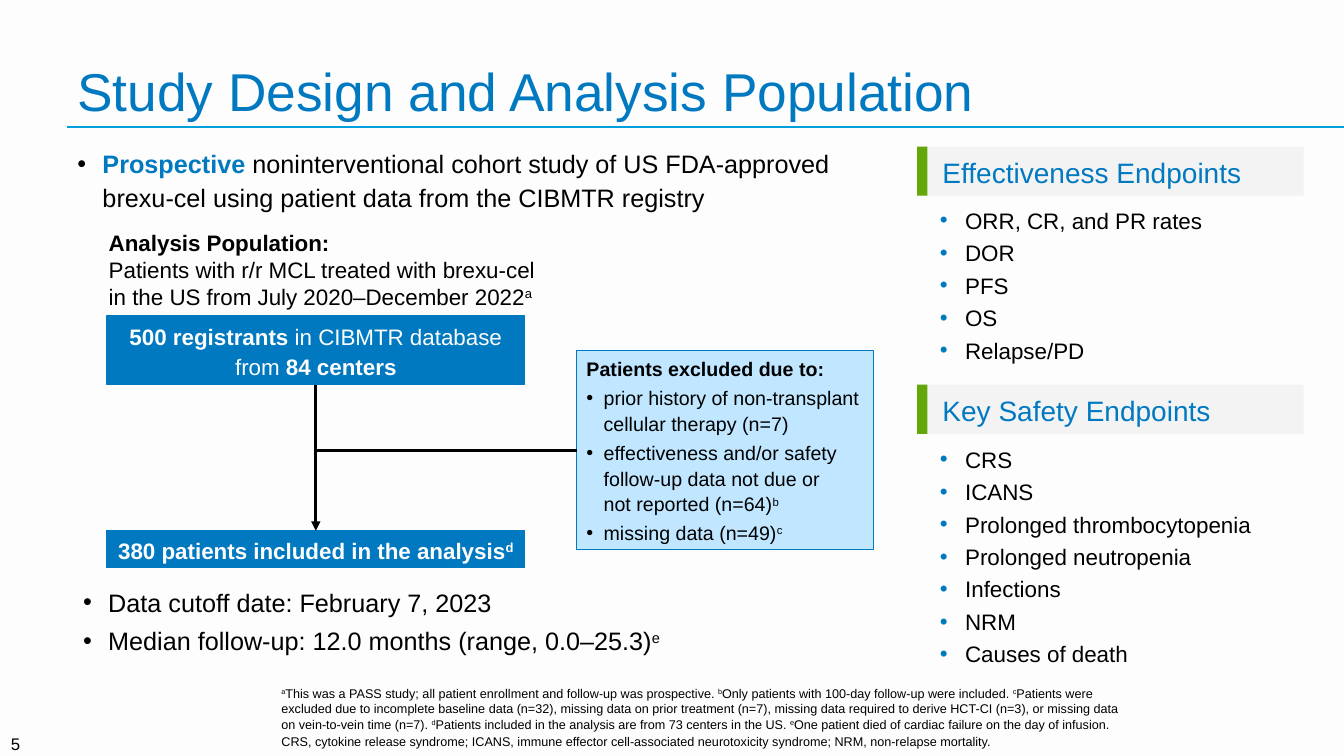
from lxml import etree
from pptx import Presentation
from pptx import util as u
from pptx.dml.color import RGBColor
from pptx.enum import shapes, text
from pptx.oxml import ns

BLUE, INK, PAPER = "0079C1", "000000", "FDFDFD"
GREEN, GREY, PALE, RULE = "63A70A", "F3F3F4", "C0E7FF", "00A0DD"
LEFT, CENTER, RIGHT = text.PP_ALIGN.LEFT, text.PP_ALIGN.CENTER, text.PP_ALIGN.RIGHT
TOP, MIDDLE, BOTTOM = text.MSO_ANCHOR.TOP, text.MSO_ANCHOR.MIDDLE, text.MSO_ANCHOR.BOTTOM
TIGHT, ROOMY = (0.1, 0.05, 0.1, 0.05), (0.25, 0.12, 0.2, 0.1)


def rgb(hex_color):
    return RGBColor.from_string(hex_color)


def write(p, words, size=16, color=INK, strong=None, align=LEFT, spacing=1.0,
          after=0, bullet=None, indent=0.25):
    """Fill a paragraph, where *...* is bold and ^...^ is superscript."""
    pPr = p._p.get_or_add_pPr()
    if bullet:
        pPr.set("marL", str(u.Inches(indent)))
        pPr.set("indent", str(-u.Inches(indent)))
        bu_color = etree.SubElement(pPr, ns.qn("a:buClr"))
        etree.SubElement(bu_color, ns.qn("a:srgbClr"), val=bullet)
        etree.SubElement(pPr, ns.qn("a:buFont"), typeface="Arial")
        etree.SubElement(pPr, ns.qn("a:buChar"), char="•")
    p.alignment, p.line_spacing = align, spacing
    p.space_before, p.space_after = u.Pt(0), u.Pt(after)
    for i, part in enumerate(words.split("*")):
        for j, bit in enumerate(part.split("^")):
            for k, line in enumerate(bit.split("\n")):
                if k:
                    p.add_line_break()
                if not line:
                    continue
                r = p.add_run()
                r.text = line
                r.font.name, r.font.size = "Arial", u.Pt(size)
                r.font.bold = i % 2 == 1
                r.font.color.rgb = rgb(strong if strong and i % 2 else color)
                if j % 2:
                    r._r.get_or_add_rPr().set("baseline", "30000")


class Deck:
    """Draws on one slide, with places in percent of its width and height."""

    def __init__(self):
        self.prs = Presentation()
        self.prs.slide_width, self.prs.slide_height = u.Inches(13.33), u.Inches(7.5)
        self.s = self.prs.slides.add_slide(self.prs.slide_layouts[1])
        self.s.background.fill.solid()
        self.s.background.fill.fore_color.rgb = rgb(PAPER)

    def x(self, share):
        return round(self.prs.slide_width * share / 100)

    def y(self, share):
        return round(self.prs.slide_height * share / 100)

    def place(self, x, y, w, h):
        return self.x(x), self.y(y), self.x(w), self.y(h)

    def fill_text(self, sp, paras, anchor=TOP, margins=TIGHT, **fmt):
        tf = sp.text_frame
        tf.word_wrap, tf.auto_size = True, text.MSO_AUTO_SIZE.NONE
        tf.vertical_anchor = anchor
        (tf.margin_left, tf.margin_top,
         tf.margin_right, tf.margin_bottom) = map(u.Inches, margins)
        for i, para in enumerate(paras):
            words, own = para if isinstance(para, tuple) else (para, {})
            p = tf.add_paragraph() if i else tf.paragraphs[0]
            write(p, words, **{**fmt, **own})

    def placeholder(self, idx, at, paras, **fmt):
        sp = self.s.placeholders[idx]
        sp.left, sp.top, sp.width, sp.height = self.place(*at)
        self.fill_text(sp, paras, **fmt)

    def label(self, at, paras, **fmt):
        self.fill_text(self.s.shapes.add_textbox(*self.place(*at)), paras, **fmt)

    def box(self, at, fill, paras=(), line=None, **fmt):
        sp = self.s.shapes.add_shape(shapes.MSO_SHAPE.RECTANGLE, *self.place(*at))
        sp.shadow.inherit = False
        sp.fill.solid()
        sp.fill.fore_color.rgb = rgb(fill)
        if line:
            sp.line.color.rgb, sp.line.width = rgb(line), u.Pt(0.75)
        else:
            sp.line.fill.background()
        self.fill_text(sp, paras, **fmt)

    def line(self, x1, y1, x2, y2, color=INK, width=2.25, arrow=False):
        c = self.s.shapes.add_connector(shapes.MSO_CONNECTOR.STRAIGHT, self.x(x1),
                                        self.y(y1), self.x(x2), self.y(y2))
        c.line.color.rgb, c.line.width = rgb(color), u.Pt(width)
        if arrow:
            etree.SubElement(c.line._get_or_add_ln(), ns.qn("a:tailEnd"), type="triangle")
        etree.SubElement(c._element.spPr, ns.qn("a:effectLst"))

    def endpoints(self, y, list_y, heading, items):
        self.box((68.25, y, 28.75, 6.5), GREY, [heading], size=20, color=BLUE,
                 anchor=MIDDLE, margins=ROOMY)
        self.box((68.25, y, 0.75, 6.5), GREEN)
        self.label((69.2, list_y, 27, 4.4 * len(items)), items, after=4, bullet=BLUE)


def main():
    deck = Deck()
    deck.line(5, 16.8, 100, 16.8, RULE, 0.75)
    deck.label((0, 96.8, 2.25, 3.2), ["5"], size=12, align=RIGHT, anchor=MIDDLE)
    deck.placeholder(0, (5, 0.1, 90, 16.7), ["Study Design and Analysis Population"],
                     size=38, color=BLUE, anchor=BOTTOM)
    deck.placeholder(1, (5, 18.6, 60, 11), [
        "*Prospective* noninterventional cohort study of US FDA-approved\n"
        "brexu-cel using patient data from the CIBMTR registry",
    ], size=18, strong=BLUE, spacing=1.1, bullet=INK)
    deck.label((4.3, 78.7, 47, 6.7), [
        "Data cutoff date: February 7, 2023",
        "Median follow-up: 12.0 months (range, 0.0–25.3)^e^",
    ], size=18, after=6, bullet=INK, anchor=MIDDLE, margins=ROOMY)

    deck.endpoints(19.4, 26.7, "Effectiveness Endpoints",
                   ["ORR, CR, and PR rates", "DOR", "PFS", "OS", "Relapse/PD"])
    deck.endpoints(50.9, 58.3, "Key Safety Endpoints",
                   ["CRS", "ICANS", "Prolonged thrombocytopenia", "Prolonged neutropenia",
                    "Infections", "NRM", "Causes of death"])

    deck.label((7.35, 29.7, 46, 12.1), [
        "*Analysis Population:*",
        "Patients with r/r MCL treated with brexu-cel\n"
        "in the US from July 2020–December 2022^a^",
    ])
    cohort = dict(line=BLUE, color=PAPER, align=CENTER, spacing=1.1, anchor=MIDDLE)
    deck.box((7.95, 41.8, 31.1, 9), BLUE,
             ["*500 registrants* in CIBMTR database from *84 centers*"], **cohort)
    deck.box((7.95, 70.2, 31.1, 4.9), BLUE,
             ["*380 patients included in the analysis^d^*"], **cohort)
    item = dict(bullet=INK, indent=0.17)
    deck.box((42.9, 46.3, 22.1, 26.4), PALE, [
        "*Patients excluded due to:*",
        ("prior history of non-transplant\ncellular therapy (n=7)", item),
        ("effectiveness and/or safety\nfollow-up data not due or\nnot reported (n=64)^b^", item),
        ("missing data (n=49)^c^", item),
    ], line=BLUE, size=14, spacing=1.1, after=2)
    deck.line(23.5, 50.9, 23.5, 70.2, arrow=True)
    deck.line(23.5, 59.6, 42.9, 59.6)

    deck.label((20.2, 90, 64.5, 9.8), [
        "^a^This was a PASS study; all patient enrollment and follow-up was prospective. "
        "^b^Only patients with 100-day follow-up were included. ^c^Patients were excluded "
        "due to incomplete baseline data (n=32), missing data on prior treatment (n=7), "
        "missing data required to derive HCT-CI (n=3), or missing data on vein-to-vein time "
        "(n=7). ^d^Patients included in the analysis are from 73 centers in the US. "
        "^e^One patient died of cardiac failure on the day of infusion.",
        "CRS, cytokine release syndrome; ICANS, immune effector cell-associated "
        "neurotoxicity syndrome; NRM, non-relapse mortality.",
    ], size=9, after=2, anchor=BOTTOM)
    deck.prs.save("out.pptx")


if __name__ == "__main__":
    main()
